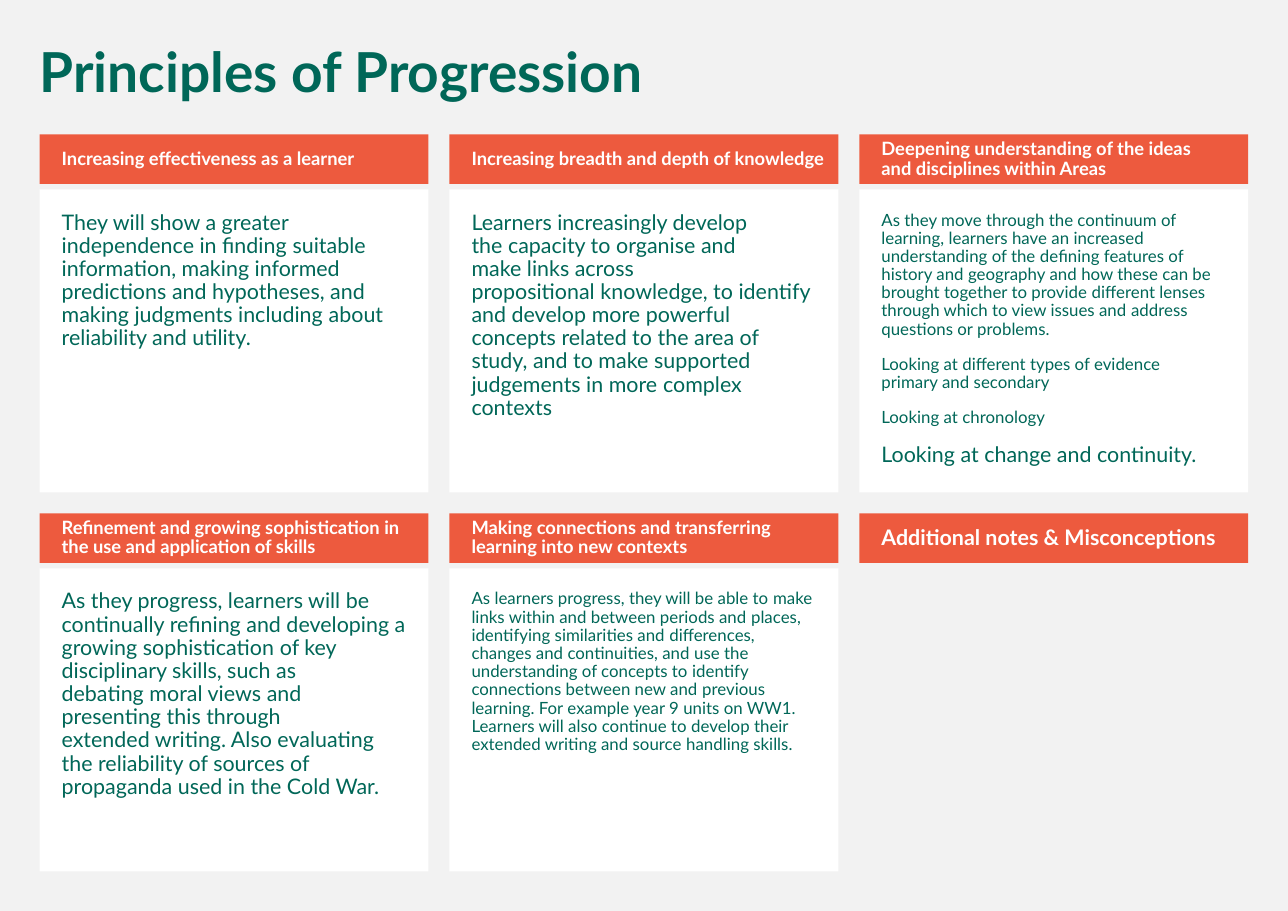
from pptx import Presentation
from pptx import util as u
from pptx.dml.color import RGBColor
from pptx.enum import shapes, text

FONT = "Lato"
COLOURS = {"background": "F2F2F2", "header": "ED5A3E", "card": "FFFFFF",
           "header_text": "FFFFFF", "green": "006758"}
TITLE = "Principles of Progression"
TIE = "~"

# heading, heading size, [(paragraph, size)]; a tie stands for a no-break space
CARDS = [
    ("Increasing effectiveness as a learner", 12, [
        ("They will show a greater independence in finding~suitable information, "
         "making informed predictions~and hypotheses, and making judgments "
         "including~about reliability and utility.", 14)]),
    ("Increasing breadth and depth of knowledge", 12, [
        ("Learners increasingly develop the~capacity to~organise~and make~links across "
         "propositional~knowledge, to identify and develop~more powerful concepts "
         "related to~the area of study, and to make~supported judgements in "
         "more~complex contexts", 14)]),
    ("Deepening understanding of the ideas and~disciplines within Areas", 12, [
        ("As they move through the continuum of learning,~learners have an increased "
         "understanding of the~defining features of history and geography and~how these "
         "can be brought together to provide~different lenses through which to view "
         "issues and~address questions or~problems.", 11),
        ("Looking at different types of evidence primary~and~secondary", 11),
        ("Looking at~chronology", 11),
        ("Looking at change and continuity.", 14)]),
    ("Refinement and growing sophistication in the use and~application of skills", 12, [
        ("As they progress, learners will be continually~refining and developing a growing "
         "sophistication~of key disciplinary skills, such as debating~moral views~and "
         "presenting~this through extended~writing. Also evaluating the reliability of "
         "sources of propaganda used in the Cold War.", 14)]),
    ("Making connections and transferring learning into~new contexts", 12, [
        ("As learners progress, they will be able to~make links within and between periods "
         "and~places, identifying similarities and~differences, changes and continuities, "
         "and~use the understanding of concepts to~identify connections between new "
         "and~previous learning. For~example~year~9 units~on WW1.~ Learners will also "
         "continue to~develop their extended writing and source~handling skills.", 11)]),
    ("Additional notes & Misconceptions", 14, []),
]

COLUMNS = 3
LEFT, TOP = 0.36, 1.22
COLUMN_STEP, ROW_STEP = 3.72, 3.44
WIDTH, HEADER_HEIGHT, CARD_HEIGHT = 3.53, 0.45, 2.75
CARD_OFFSET = 0.5


def colour(name):
    return RGBColor.from_string(COLOURS[name])


def write(shape, paragraphs, text_colour, bold, anchor, insets):
    frame = shape.text_frame
    frame.word_wrap = True
    frame.auto_size = text.MSO_AUTO_SIZE.NONE
    frame.vertical_anchor = anchor
    (frame.margin_left, frame.margin_top,
     frame.margin_right, frame.margin_bottom) = map(u.Inches, insets)
    frame.text = "\n".join(words for words, size in paragraphs).replace(TIE, chr(160))
    for paragraph, (words, size) in zip(frame.paragraphs, paragraphs):
        paragraph.alignment = text.PP_ALIGN.LEFT
        paragraph.line_spacing = 0.9
        paragraph.space_before = u.Pt(11)
        for run in paragraph.runs:
            run.font.name = FONT
            run.font.size = u.Pt(size)
            run.font.bold = bold
            run.font.color.rgb = colour(text_colour)


def add_panel(slide, left, top, height, fill):
    panel = slide.shapes.add_shape(shapes.MSO_SHAPE.RECTANGLE, u.Inches(left),
                                   u.Inches(top), u.Inches(WIDTH), u.Inches(height))
    panel.shadow.inherit = False
    panel.fill.solid()
    panel.fill.fore_color.rgb = colour(fill)
    panel.line.fill.background()
    return panel


def main():
    presentation = Presentation()
    presentation.slide_width = u.Inches(11.69)
    presentation.slide_height = u.Inches(8.27)
    slide = presentation.slides.add_slide(presentation.slide_layouts[5])
    slide.background.fill.solid()
    slide.background.fill.fore_color.rgb = colour("background")

    title = slide.shapes.title
    title.left, title.top = u.Inches(0.26), u.Inches(0.36)
    title.width, title.height = u.Inches(11.08), u.Inches(0.65)
    write(title, [(TITLE, 36)], "green", True, text.MSO_ANCHOR.TOP, (0.1, 0.05, 0.1, 0.05))

    for index, (heading, heading_size, paragraphs) in enumerate(CARDS):
        row, column = divmod(index, COLUMNS)
        left, top = LEFT + column * COLUMN_STEP, TOP + row * ROW_STEP
        if paragraphs:
            card = add_panel(slide, left, top + CARD_OFFSET, CARD_HEIGHT, "card")
            write(card, paragraphs, "green", False, text.MSO_ANCHOR.TOP, [0.2] * 4)
        header = add_panel(slide, left, top, HEADER_HEIGHT, "header")
        write(header, [(heading, heading_size)], "header_text", True,
              text.MSO_ANCHOR.MIDDLE, (0.2, 0.05, 0.1, 0.05))

    presentation.save("out.pptx")


if __name__ == "__main__":
    main()
